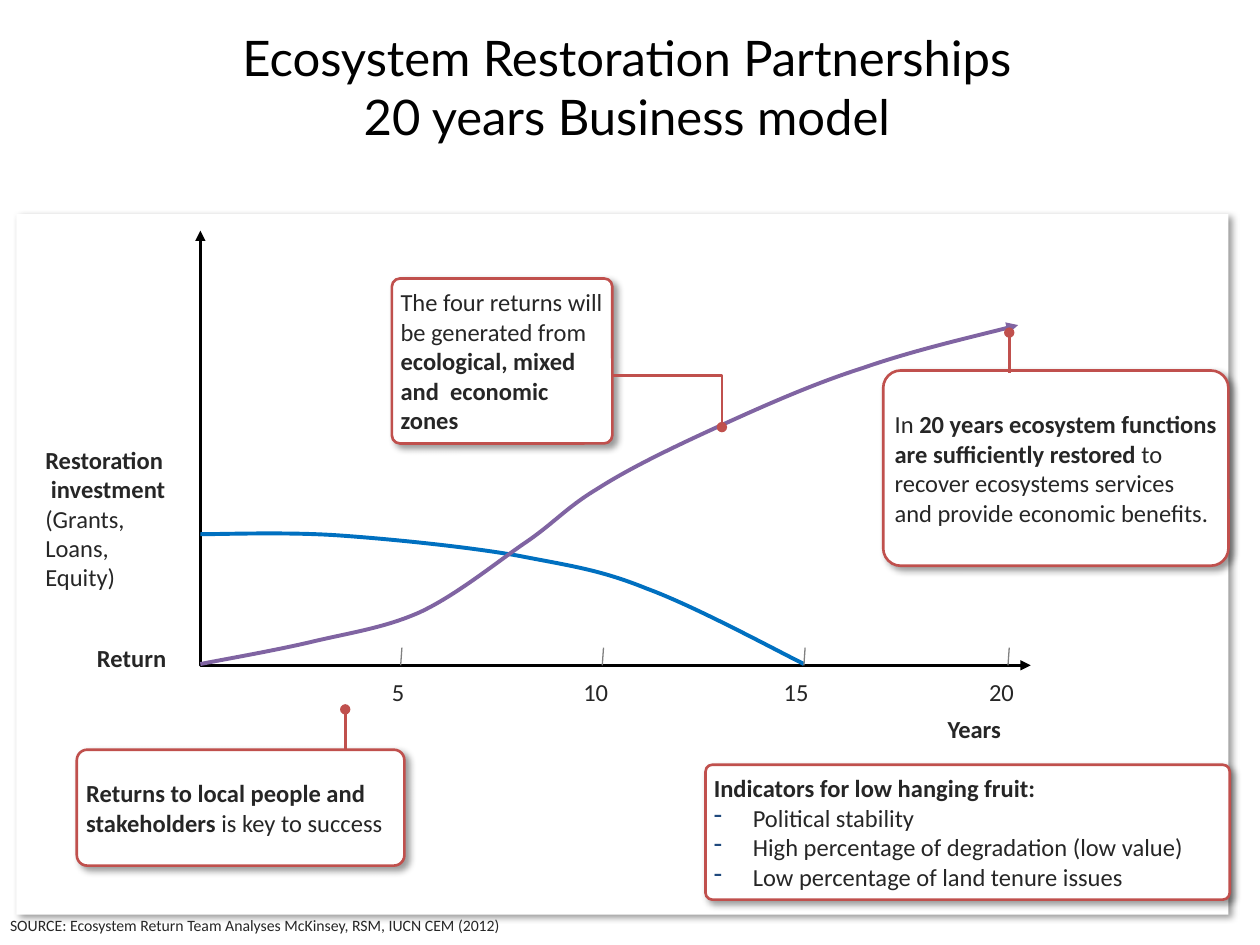
from lxml.etree import SubElement
from pptx import Presentation
from pptx.dml.color import RGBColor
from pptx.enum.shapes import MSO_CONNECTOR, MSO_SHAPE
from pptx.enum.text import MSO_ANCHOR, PP_ALIGN
from pptx.oxml.ns import qn
from pptx.util import Inches, Pt

WHITE, BLACK, INK = "FFFFFF", "000000", "262626"
RED, BLUE, PURPLE, GREY, NAVY = "C0504D", "0070C0", "8064A2", "808080", "1F497D"

deck = Presentation()
deck.slide_width, deck.slide_height = Inches(10), Inches(7.5)
page = deck.slides.add_slide(deck.slide_layouts[6])
CELL = deck.slide_width // 100  # square grid: 100 columns by 75 rows


def cells(*counts):
    return [round(count * CELL) for count in counts]


def add_xml(parent, tag, **attributes):
    return SubElement(parent, qn(tag), {key: str(value) for key, value in attributes.items()})


# Panel and cards: place, corner rounding, outline, paragraphs of (text, bold) spans
cards = [
    ((1.3, 17, 96.2, 55.6), 0, None, []),
    ((6.1, 59.5, 26, 9.2), 0.09, RED,
     [[("Returns to local people and stakeholders", True), (" is key to success", False)]]),
    ((31.1, 22.1, 17.5, 13.1), 0.05, RED,
     [[("The four returns will be generated from ", False),
       ("ecological, mixed and  economic zones", True)]]),
    ((70.1, 29.4, 27.4, 15.5), 0.09, RED,
     [[("In ", False), ("20 years ecosystem functions are sufficiently restored", True),
       (" to recover ecosystems services and provide economic benefits.", False)]]),
    ((56, 60.7, 41.6, 10.7), 0.05, RED,
     [[("Indicators for low hanging fruit:", True)],
      [("Political stability", False)],
      [("High percentage of degradation (low value)", False)],
      [("Low percentage of land tenure issues", False)]]),
]
body = {"size": Pt(14), "name": "Calibri"}
texts = []  # shape, paragraphs, font, frame format, alignment
for place, rounding, outline, paragraphs in cards:
    kind = MSO_SHAPE.ROUNDED_RECTANGLE if outline else MSO_SHAPE.RECTANGLE
    box = page.shapes.add_shape(kind, *cells(*place))
    box.fill.solid()
    box.fill.fore_color.rgb = RGBColor.from_string(WHITE)
    if outline:
        box.adjustments[0] = rounding
        box.line.color.rgb = RGBColor.from_string(outline)
        box.line.width = Pt(1.5)
    else:
        box.line.fill.background()
    box.shadow.inherit = False
    effects = box.element.spPr.find(qn("a:effectLst"))
    shadow = add_xml(effects, "a:outerShdw", blurRad=Pt(4), dist=Pt(3), dir=45 * 60000,
                     algn="tl", rotWithShape=0)
    add_xml(add_xml(shadow, "a:srgbClr", val=BLACK), "a:alpha", val=40000)
    inset = Inches(0.05)
    frame = {"word_wrap": True, "vertical_anchor": MSO_ANCHOR.MIDDLE, "margin_left": inset,
             "margin_right": inset, "margin_top": inset, "margin_bottom": inset}
    texts.append((box, paragraphs, body, INK, frame, PP_ALIGN.LEFT))

# Labels: place, paragraphs
labels = [
    ((75.2, 56.7, 4.5, 2.4), [[("Years", True)]]),
    ((7.7, 51, 5.6, 2.4), [[("Return", True)]]),
    ((3.6, 35.3, 11.7, 18.6), [[("Restoration", True)], [(" investment", True)],
                               [("(Grants, Loans,", False)], [("Equity)", False)]]),
]
ticks = [(5, 31.8, 31.1), (10, 47.8, 46.3), (15, 63.8, 62.2), (20, 80, 78.5)]
labels += [((left, 53.7, len(str(year)), 2.4), [[(str(year), False)]])
           for year, column, left in ticks]
flush = {"word_wrap": False, "margin_left": 0, "margin_right": 0,
         "margin_top": 0, "margin_bottom": 0}
for place, paragraphs in labels:
    box = page.shapes.add_textbox(*cells(*place))
    texts.append((box, paragraphs, body, INK, flush, PP_ALIGN.LEFT))

source = page.shapes.add_textbox(*cells(0.8, 72.7, 76.6, 1.5))
texts.append((source, [[("SOURCE: Ecosystem Return Team Analyses McKinsey, RSM, IUCN CEM (2012)", False)]],
              {"size": Pt(9), "name": "Calibri"}, INK,
              flush | {"word_wrap": True, "vertical_anchor": MSO_ANCHOR.MIDDLE}, PP_ALIGN.LEFT))
title = page.shapes.add_textbox(*cells(0, 1.7, 99.5, 12.5))
texts.append((title, [[("Ecosystem Restoration Partnerships", False)],
                      [("20 years Business model", False)]],
              {"size": Pt(28), "name": "Lato"}, BLACK, {"word_wrap": True}, PP_ALIGN.CENTER))

for box, paragraphs, font, ink, frame, alignment in texts:
    for key, value in frame.items():
        setattr(box.text_frame, key, value)
    for index, spans in enumerate(paragraphs):
        para = box.text_frame.paragraphs[0] if index == 0 else box.text_frame.add_paragraph()
        para.alignment = alignment
        if index and paragraphs[0][0][0].startswith("Indicators"):
            properties = para._p.get_or_add_pPr()
            properties.set("marL", str(Inches(0.31)))
            properties.set("indent", str(-Inches(0.31)))
            add_xml(add_xml(properties, "a:buClr"), "a:srgbClr", val=NAVY)
            add_xml(properties, "a:buChar", char="-")
        for words, bold in spans:
            span = para.add_run()
            span.text = words
            span.font.color.rgb = RGBColor.from_string(ink)
            for key, value in (font | {"bold": bold}).items():
                setattr(span.font, key, value)

# Strokes: points, curved, colour, width, head, tail
investment = [(15.9, 42.4), (17.7, 42.4), (22.8, 42.2), (27, 42.5), (31.2, 42.8), (37.1, 43.4),
              (41.1, 44.1), (45.2, 44.9), (47.6, 45.2), (51.3, 46.7), (55.1, 48.1),
              (61.2, 51.4), (63.8, 52.7)]
returns = [(15.9, 52.7), (17.4, 52.4), (22, 51.6), (24.9, 50.9), (27.9, 50.2), (30.6, 49.8),
           (33.3, 48.6), (36.1, 47.3), (39.2, 44.8), (41.5, 43.2), (43.9, 41.6), (44.9, 40.3),
           (47.4, 38.8), (49.9, 37.2), (53.2, 35.6), (56.7, 34), (60.2, 32.4), (64.4, 30.5),
           (68.5, 29.2), (72.5, 27.8), (78.2, 26.5), (80.8, 25.8)]
strokes = [
    ([(15.9, 18.3), (15.9, 52.8), (81.8, 52.8)], False, BLACK, 1.5, "triangle", "triangle"),
    (investment, True, BLUE, 2.25, None, None),
    (returns, True, PURPLE, 2.25, None, "triangle"),
    ([(27.4, 59.5), (27.4, 56.3)], False, RED, 1.5, None, "oval"),
    ([(48.6, 29.8), (57.3, 29.8), (57.3, 33.9)], False, RED, 1.5, None, "oval"),
    ([(80.1, 29.6), (80.1, 26.4)], False, RED, 1.5, None, "oval"),
]
strokes += [([(column, 52.8), (column + 0.1, 51.4)], False, GREY, 0.75, None, None)
            for year, column, left in ticks]
for points, curved, hue, width, head, tail in strokes:
    spots = [cells(*point) for point in points]
    if len(spots) == 2:
        stroke = page.shapes.add_connector(MSO_CONNECTOR.STRAIGHT, *spots[0], *spots[1])
    else:
        builder = page.shapes.build_freeform(*spots[0])
        builder.add_line_segments(spots[1:], close=False)
        stroke = builder.convert_to_shape()
        stroke.fill.background()
    stroke.line.color.rgb = RGBColor.from_string(hue)
    stroke.line.width = Pt(width)
    for tag, end in (("a:headEnd", head), ("a:tailEnd", tail)):
        if end:
            add_xml(stroke.line._get_or_add_ln(), tag, type=end)
    add_xml(stroke.element.spPr, "a:effectLst")
    if curved:  # every three segments become one Bezier curve
        outline = stroke.element.spPr.find(".//" + qn("a:path"))
        segments = outline.findall(qn("a:lnTo"))
        for start in range(0, len(segments), 3):
            curve = add_xml(outline, "a:cubicBezTo")
            for segment in segments[start:start + 3]:
                curve.append(segment[0])
                outline.remove(segment)

deck.save("out.pptx")
